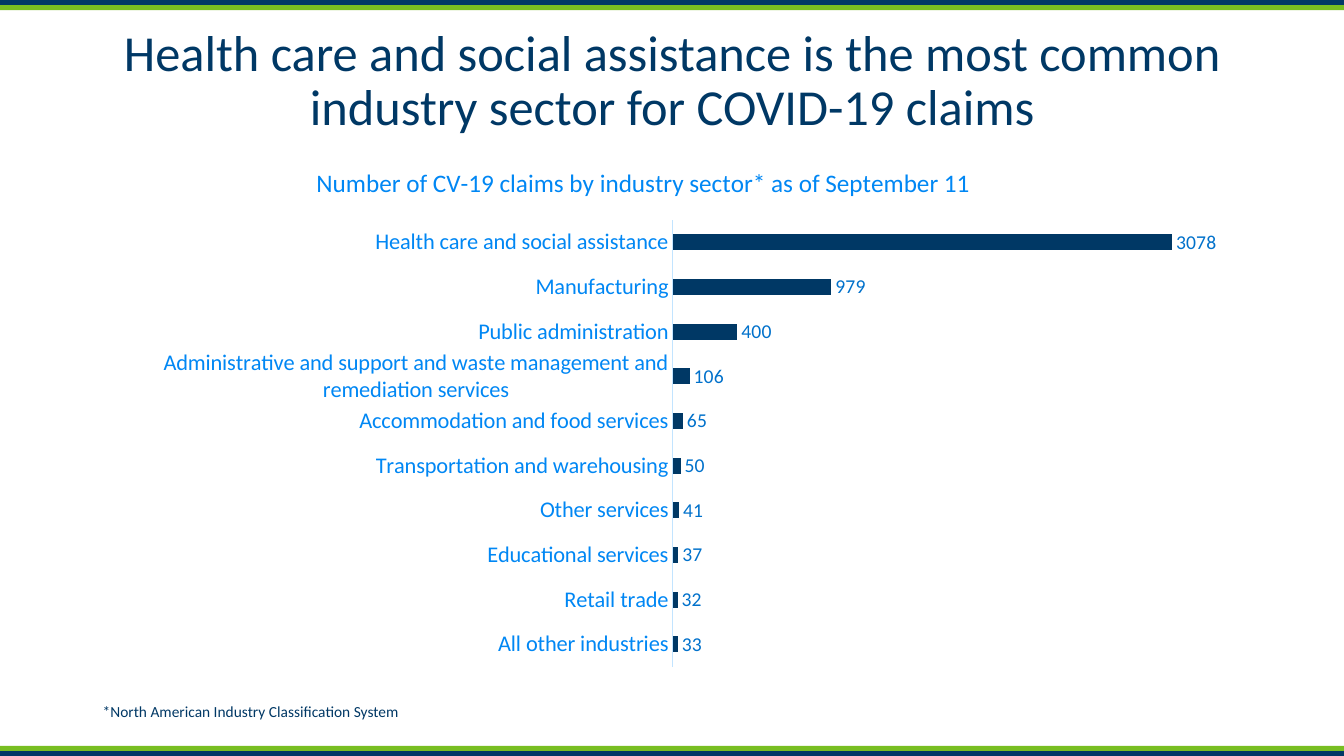
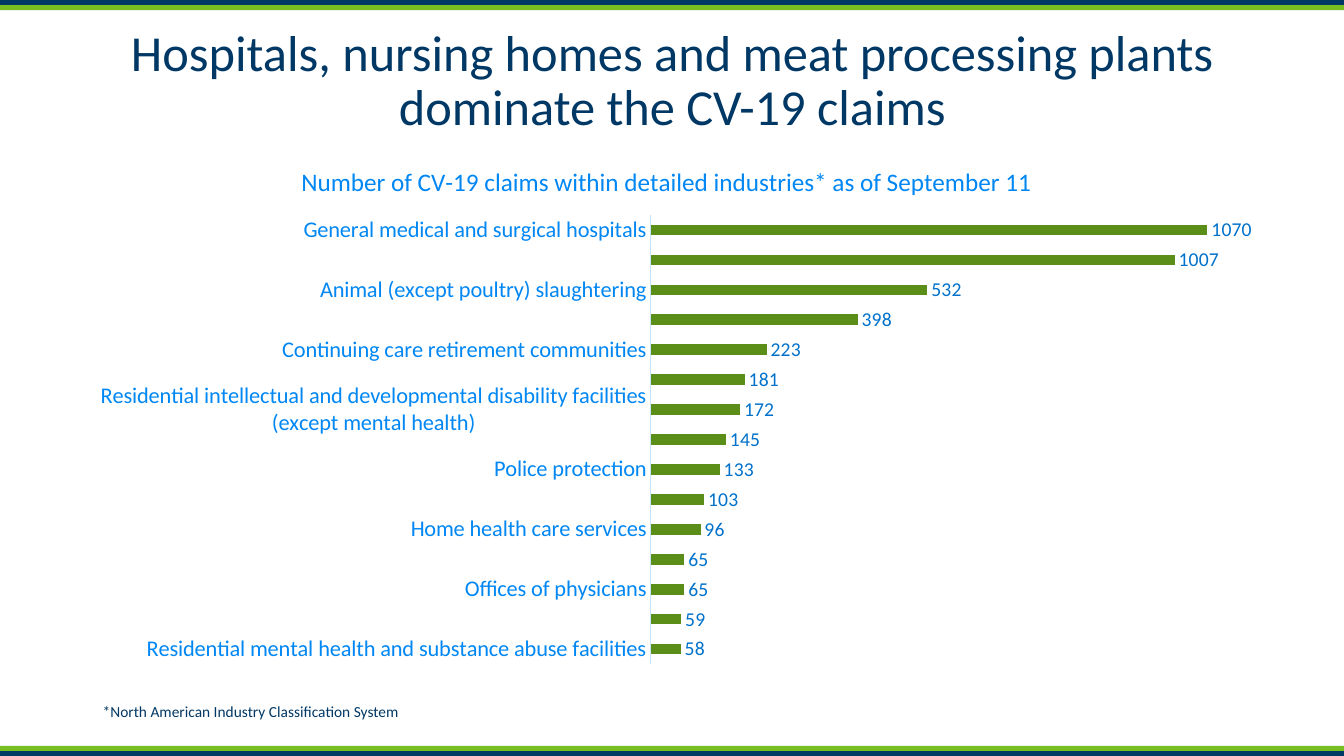
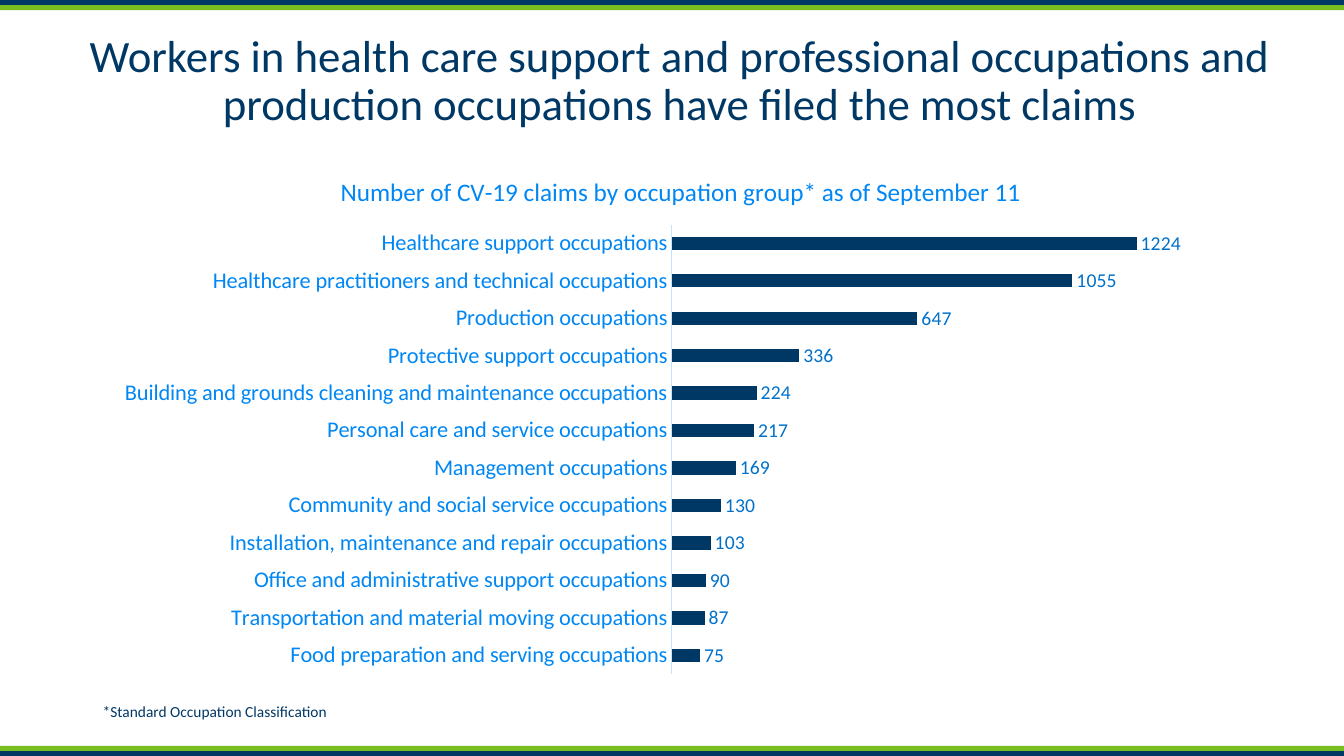
import pptx
import pptx.chart.data
import pptx.dml.color
import pptx.enum.chart
import pptx.enum.shapes
import pptx.enum.text
import pptx.oxml
import pptx.oxml.ns
import pptx.util

# Shared look
EMU_PER_PX = 9144  # 100 px to the inch
WIDTH, HEIGHT = 1333, 750
FONT = "Calibri"
NAVY, LIME, GREEN = "003865", "78BE21", "5A8E19"
SKY, BLUE, PALE = "0087F4", "0071CB", "C2E4FF"
BAND = 5
BANDS = [(HEIGHT - BAND, NAVY), (HEIGHT - 2 * BAND, LIME), (0, NAVY), (BAND, LIME)]
TITLE_BOX = (92, 40, 1150, 83)
NOTE_BOX = (92, 692, 384, 29)
INDUSTRY_NOTE = "*North American Industry Classification System"

# Content: boxes in px, layouts as fractions of the chart, bars from top to bottom
SLIDES = [
    {
        "title": "Health care and social assistance is the most common "
                 "industry sector for COVID-19 claims",
        "note": INDUSTRY_NOTE,
        "heading": "Number of CV-19 claims by industry sector* as of September 11",
        "chart_box": (92, 159, 1150, 516),
        "heading_at": (0.189, 0),
        "plot_at": (0.5, 0.115, 0.49, 0.859),
        "maximum": 3500,
        "bars": [
            ("Health care and social assistance", 3078),
            ("Manufacturing", 979),
            ("Public administration", 400),
            ("Administrative and support and waste management and remediation services", 106),
            ("Accommodation and food services", 65),
            ("Transportation and warehousing", 50),
            ("Other services", 41),
            ("Educational services", 37),
            ("Retail trade", 32),
            ("All other industries", 33),
        ],
    },
    {
        "title": "Hospitals, nursing homes and meat processing plants "
                 "dominate the CV-19 claims",
        "note": INDUSTRY_NOTE,
        "heading": "Number of CV-19 claims within detailed industries* as of September 11",
        "chart_box": (37, 158, 1249, 517),
        "heading_at": (0.206, 0),
        "plot_at": (0.487, 0.107, 0.496, 0.862),
        "maximum": 1200,
        "color": GREEN,
        # Every other bar has no name
        "bars": [
            ("General medical and surgical hospitals", 1070),
            ("", 1007),
            ("Animal (except poultry) slaughtering", 532),
            ("", 398),
            ("Continuing care retirement communities", 223),
            ("", 181),
            ("Residential intellectual and developmental disability facilities "
             "(except mental health)", 172),
            ("", 145),
            ("Police protection", 133),
            ("", 103),
            ("Home health care services", 96),
            ("", 65),
            ("Offices of physicians", 65),
            ("", 59),
            ("Residential mental health and substance abuse facilities", 58),
        ],
    },
    {
        "title": "Workers in health care support and professional occupations and "
                 "production occupations have filed the most claims",
        "title_box": (57, 40, 1235, 83),
        "title_size": 32,
        "note": "*Standard Occupation Classification",
        "heading": "Number of CV-19 claims by occupation group* as of September 11",
        "chart_box": (74, 168, 1168, 508),
        "heading_at": (0.222, 0),
        "plot_at": (0.507, 0.108, 0.484, 0.878),
        "maximum": 1500,
        "bars": [
            ("Healthcare support occupations", 1224),
            ("Healthcare practitioners and technical occupations", 1055),
            ("Production occupations", 647),
            ("Protective support occupations", 336),
            ("Building and grounds cleaning and maintenance occupations", 224),
            ("Personal care and service occupations", 217),
            ("Management occupations", 169),
            ("Community and social service occupations", 130),
            ("Installation, maintenance and repair occupations", 103),
            ("Office and administrative support occupations", 90),
            ("Transportation and material moving occupations", 87),
            ("Food preparation and serving occupations", 75),
        ],
    },
]


def px(*lengths):
    return [pptx.util.Emu(length * EMU_PER_PX) for length in lengths]


def rgb(color):
    return pptx.dml.color.RGBColor.from_string(color)


def style_font(font, size, color):
    font.name = FONT
    font.size = pptx.util.Pt(size)
    font.bold = False
    font.color.rgb = rgb(color)


def add_text(page, text, box, size=11, color=NAVY, align="LEFT", anchor="TOP", spacing=1.0):
    frame = page.shapes.add_textbox(*px(*box)).text_frame
    frame.word_wrap = True
    frame.vertical_anchor = getattr(pptx.enum.text.MSO_ANCHOR, anchor)
    para = frame.paragraphs[0]
    para.alignment = getattr(pptx.enum.text.PP_ALIGN, align)
    para.line_spacing = spacing
    span = para.add_run()
    span.text = text
    style_font(span.font, size, color)


def add_bands(page):
    for top, color in BANDS:
        band = page.shapes.add_shape(
            pptx.enum.shapes.MSO_SHAPE.RECTANGLE, *px(0, top, WIDTH, BAND))
        band.shadow.inherit = False
        band.fill.solid()
        band.fill.fore_color.rgb = rgb(color)
        band.line.fill.background()


def place(element, index, fractions, inner=False):
    """Give a chart title or plot area a fixed place inside its chart."""
    for old in element.findall(pptx.oxml.ns.qn("c:layout")):
        element.remove(old)
    target = '<c:layoutTarget val="inner"/>' if inner else ""
    modes = '<c:xMode val="edge"/><c:yMode val="edge"/>'
    values = "".join(f'<c:{name} val="{value}"/>' for name, value in zip("xywh", fractions))
    element.insert(index, pptx.oxml.parse_xml(
        f'<c:layout {pptx.oxml.ns.nsdecls("c")}><c:manualLayout>'
        f'{target}{modes}{values}</c:manualLayout></c:layout>'))


def add_bar_chart(page, content):
    # Bar charts are filled from the bottom up
    names, values = zip(*reversed(content["bars"]))
    data = pptx.chart.data.CategoryChartData()
    data.categories = names
    data.add_series("Series 1", values)
    chart = page.shapes.add_chart(
        pptx.enum.chart.XL_CHART_TYPE.BAR_CLUSTERED, *px(*content["chart_box"]), data).chart
    style_font(chart.font, 10, NAVY)
    chart.has_legend = False

    # Heading and plot area
    chart.has_title = True
    heading = chart.chart_title
    heading.include_in_layout = False
    span = heading.text_frame.paragraphs[0].add_run()
    span.text = content["heading"]
    style_font(span.font, 18, SKY)
    place(heading._element, 1, content["heading_at"])
    place(chart._chartSpace.find(".//" + pptx.oxml.ns.qn("c:plotArea")), 0,
          content["plot_at"], inner=True)

    # Axes
    names_axis, values_axis = chart.category_axis, chart.value_axis
    names_axis.major_tick_mark = pptx.enum.chart.XL_TICK_MARK.NONE
    names_axis.has_major_gridlines = False
    style_font(names_axis.tick_labels.font, 16, SKY)
    names_axis.format.line.color.rgb = rgb(PALE)
    names_axis.format.line.width = pptx.util.Pt(0.75)
    values_axis.visible = False
    values_axis.has_major_gridlines = False
    values_axis.minimum_scale = 0
    values_axis.maximum_scale = content["maximum"]

    # Bars and their values
    plot = chart.plots[0]
    plot.vary_by_categories = False
    plot.gap_width = 182
    fill = plot.series[0].format.fill
    fill.solid()
    fill.fore_color.rgb = rgb(content.get("color", NAVY))
    plot.has_data_labels = True
    labels = plot.data_labels
    labels.show_value = True
    labels.position = pptx.enum.chart.XL_LABEL_POSITION.OUTSIDE_END
    style_font(labels.font, 14, BLUE)


def main():
    deck = pptx.Presentation()
    deck.slide_width, deck.slide_height = px(WIDTH, HEIGHT)
    for content in SLIDES:
        page = deck.slides.add_slide(deck.slide_layouts[6])
        add_bands(page)
        add_text(page, content["title"], content.get("title_box", TITLE_BOX),
                 size=content.get("title_size", 36), align="CENTER", anchor="MIDDLE",
                 spacing=0.9)
        add_text(page, content["note"], NOTE_BOX)
        add_bar_chart(page, content)
    deck.save("out.pptx")


if __name__ == "__main__":
    main()
